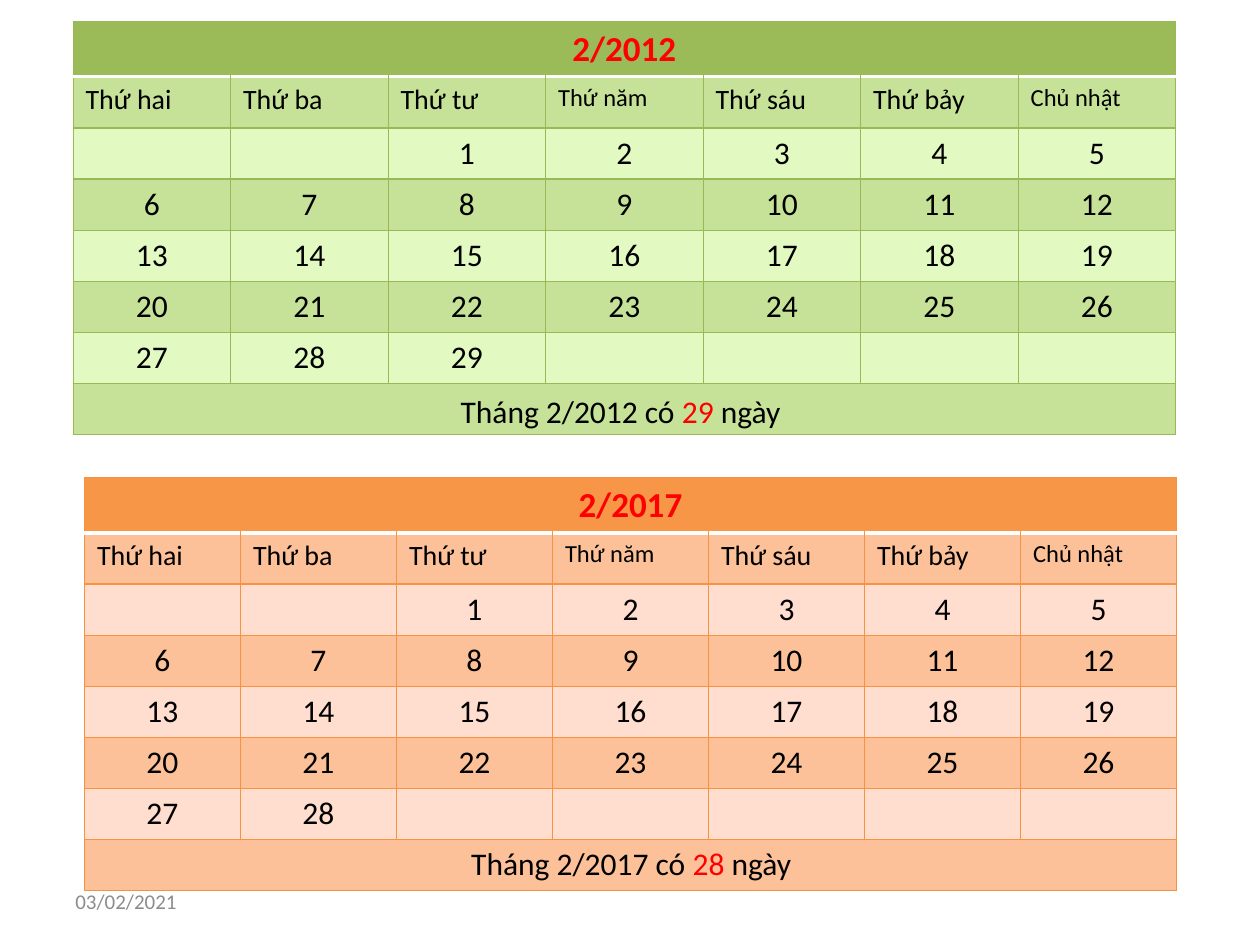
from lxml.etree import SubElement
from pptx import Presentation
from pptx.dml.color import RGBColor
from pptx.enum.text import MSO_ANCHOR, PP_ALIGN
from pptx.oxml.ns import qn
from pptx.util import Inches, Pt

RED, BLACK, WHITE, GRAY = "FF0000", "000000", "FFFFFF", "8C8C8C"
WEEKDAYS = ["Thứ hai", "Thứ ba", "Thứ tư", "Thứ năm", "Thứ sáu", "Thứ bảy", "Chủ nhật"]
SMALL_WEEKDAYS = {"Thứ năm", "Chủ nhật"}
FIRST_WEEKDAY = 2  # both months start on a Wednesday
ROWS, COLUMNS = 8, 7
TITLE_HEIGHT, TABLE_HEIGHT = 0.44, 3.28


def color(value):
    return RGBColor.from_string(value)


def add_text(para, text, size=18, fill=BLACK, bold=False, align=PP_ALIGN.LEFT):
    para.alignment = align
    span = para.add_run()
    span.text = text
    span.font.name = "Calibri"
    span.font.size = Pt(size)
    span.font.bold = bold
    span.font.color.rgb = color(fill)


def add_box(page, left, top, width, height, anchor=MSO_ANCHOR.TOP):
    box = page.shapes.add_textbox(Inches(left), Inches(top), Inches(width), Inches(height))
    box.text_frame.word_wrap = True
    box.text_frame.vertical_anchor = anchor
    return box.text_frame.paragraphs[0]


def set_border(cell, side, value, width):
    properties = cell._tc.get_or_add_tcPr()
    line = SubElement(properties, qn(f"a:ln{side}"), w=str(Pt(width)))
    SubElement(SubElement(line, qn("a:solidFill")), qn("a:srgbClr"), val=value)


def style_cell(cell, row, fill, border):
    white_side = {0: "B", 1: "T"}.get(row)  # white rule below the title
    for side in "LRTB":
        if side == white_side:
            set_border(cell, side, WHITE, 2)
        else:
            set_border(cell, side, border, 0.75)
    cell.fill.solid()
    cell.fill.fore_color.rgb = color(fill)


def add_calendar(page, left, top, width, title, days, title_fill, dark, light, border):
    frame = page.shapes.add_table(ROWS, COLUMNS, Inches(left), Inches(top),
                                  Inches(width), Inches(TABLE_HEIGHT))
    table = frame.table
    table.first_row = table.horz_banding = False
    for column in table.columns:
        column.width = Inches(width / COLUMNS)
    for index, row in enumerate(table.rows):
        row.height = Inches(TITLE_HEIGHT if index == 0
                            else (TABLE_HEIGHT - TITLE_HEIGHT) / (ROWS - 1))
        fill = title_fill if index == 0 else dark if index % 2 else light
        for cell in row.cells:
            style_cell(cell, index, fill, border)

    # Title and closing rows run across the whole week
    for index in (0, ROWS - 1):
        table.cell(index, 0).merge(table.cell(index, COLUMNS - 1))
    add_text(table.cell(0, 0).text_frame.paragraphs[0], title, size=20, fill=RED,
             bold=True, align=PP_ALIGN.CENTER)

    # Weekday names, then the days
    for column, name in enumerate(WEEKDAYS):
        add_text(table.cell(1, column).text_frame.paragraphs[0], name,
                 size=14 if name in SMALL_WEEKDAYS else 16)
    for day in range(1, days + 1):
        week, column = divmod(day - 1 + FIRST_WEEKDAY, COLUMNS)
        add_text(table.cell(week + 2, column).text_frame.paragraphs[0], str(day),
                 align=PP_ALIGN.CENTER)


def add_summary(page, left, top, width, height, month, days):
    para = add_box(page, left, top, width, height)
    for text, fill in ((f"Tháng {month} có ", BLACK), (f"{days} ", RED), ("ngày", BLACK)):
        add_text(para, text, fill=fill, align=PP_ALIGN.CENTER)


def main():
    deck = Presentation()
    deck.slide_width, deck.slide_height = Inches(10), Inches(7.5)
    page = deck.slides.add_slide(deck.slide_layouts[6])

    # Date
    add_text(add_box(page, 0.5, 6.95, 2.33, 0.4, MSO_ANCHOR.MIDDLE), "03/02/2021",
             size=12, fill=GRAY)

    # Calendars
    add_calendar(page, 0.58, 0.17, 8.75, "2/2012", 29,
                 title_fill="9BBB59", dark="C6E198", light="E2FAC2", border="98B955")
    add_calendar(page, 0.67, 3.79, 8.67, "2/2017", 28,
                 title_fill="F79646", dark="FCC198", light="FFDDCF", border="F69240")

    # Number of days in each month
    add_summary(page, 3.34, 3.06, 3.17, 0.4, "2/2012", 29)
    add_summary(page, 3.51, 6.65, 3, 0.71, "2/2017", 28)

    deck.save("out.pptx")


if __name__ == "__main__":
    main()
